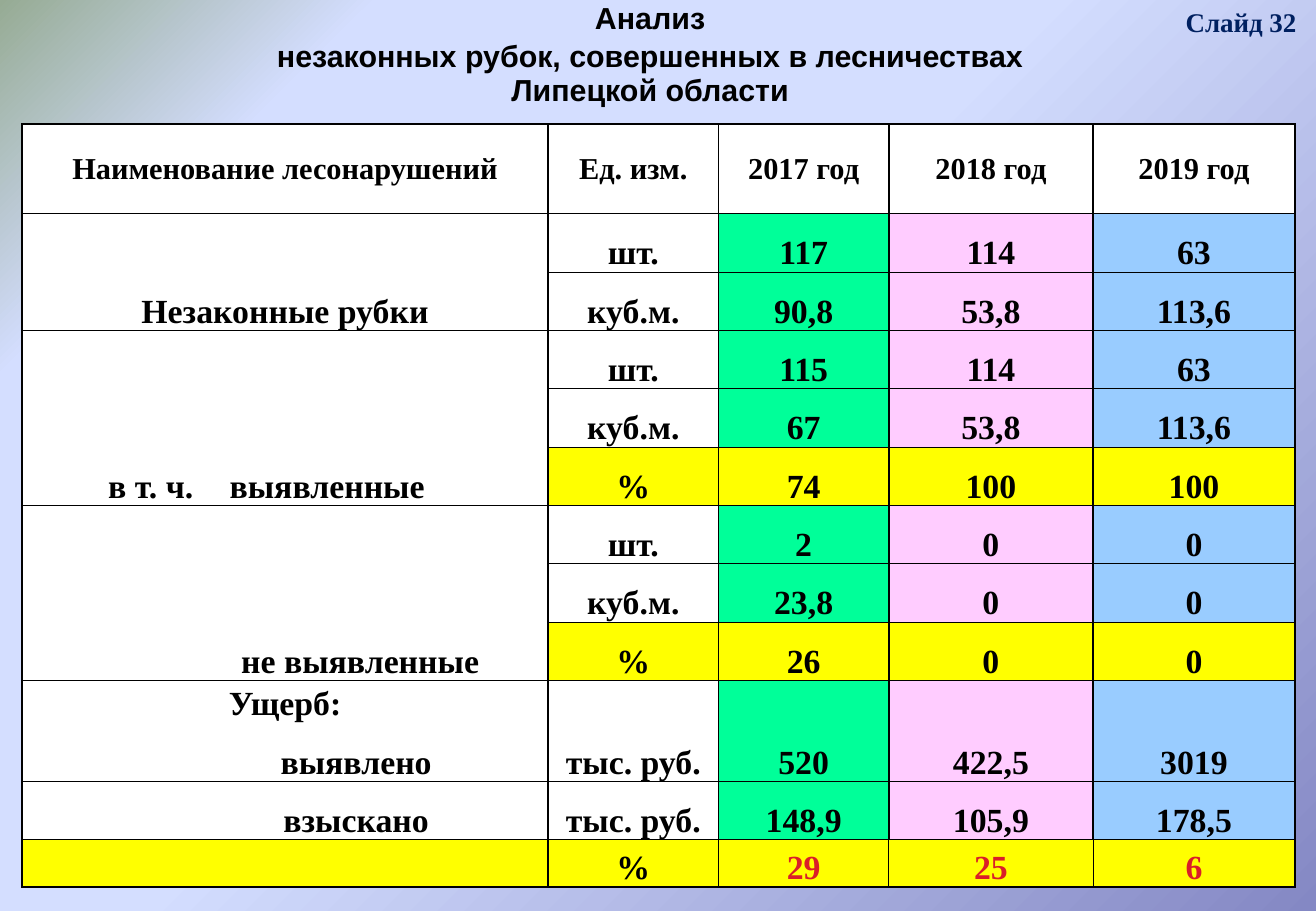
from pptx import Presentation
from pptx.dml.color import RGBColor
from pptx.enum.text import MSO_ANCHOR as Anchor, PP_ALIGN as Align
from pptx.oxml import parse_xml
from pptx.oxml.ns import nsdecls
from pptx.util import Cm, Pt

TITLE = ["Анализ", "незаконных рубок, совершенных в лесничествах Липецкой области"]
SLIDE_LABEL = "Слайд 32"
HEADER = ["Наименование лесонарушений", "Ед. изм.", "2017 год", "2018 год", "2019 год"]
# Group name, left indent in cm, rows of unit and yearly values
GROUPS = [
    ("Незаконные рубки", 0, [
        ("шт.", "117", "114", "63"),
        ("куб.м.", "90,8", "53,8", "113,6")]),
    ("в т. ч.\tвыявленные", 1.77, [
        ("шт.", "115", "114", "63"),
        ("куб.м.", "67", "53,8", "113,6"),
        ("%", "74", "100", "100")]),
    ("не выявленные", 3.14, [
        ("шт.", "2", "0", "0"),
        ("куб.м.", "23,8", "0", "0"),
        ("%", "26", "0", "0")]),
    ("Ущерб:", 0, [("", "", "", "")]),
    ("выявлено", 2.97, [("тыс. руб.", "520", "422,5", "3019")]),
    ("взыскано", 2.97, [("тыс. руб.", "148,9", "105,9", "178,5")]),
    ("", 0, [("%", "29", "25", "6")]),
]
DAMAGE_ROW, FOUND_ROW, COLLECTED_ROW, SHARE_ROW = 9, 10, 11, 12

THEME = {
    "serif": "Times New Roman", "sans": "Arial",
    "title_size": 18, "header_size": 18, "body_size": 20, "label_size": 16,
    "text": "000000", "label": "002060", "result": "DA1F28", "line": "000000",
    "columns": ["FFFFFF", "FFFFFF", "00FF99", "FFCCFF", "99CCFF"],
    "percent": "FFFF00",
    "background": [(0, "8488C4"), (53, "D4DEFF"), (83, "D4DEFF"), (100, "96AB94")],
    "thin": 0.5, "thick": 1,
}
COLUMN_WIDTHS = [11, 3.56, 3.56, 4.27, 4.22]
ROW_HEIGHTS = [1.88] + [1.22] * 8 + [0.89] + [1.22] * 2 + [0.99]
CELL_INSET = 0.03
TAB_POSITION = 5.14


def paint_background(slide):
    slide.background.fill.solid()
    stops = "".join(f'<a:gs pos="{pos * 1000}"><a:srgbClr val="{color}"/></a:gs>'
                    for pos, color in THEME["background"])
    gradient = parse_xml(
        f'<a:gradFill {nsdecls("a")} rotWithShape="1"><a:gsLst>{stops}</a:gsLst>'
        '<a:path path="circle"><a:fillToRect l="100000" t="100000"/></a:path></a:gradFill>')
    solid = slide.element.xpath(".//p:bgPr/a:solidFill")[0]
    solid.getparent().replace(solid, gradient)


def write(frame, text, font, size, color=THEME["text"]):
    paragraph = frame.paragraphs[0]
    paragraph.alignment = Align.CENTER
    if text:
        run = paragraph.add_run()
        run.text = text
        run.font.name, run.font.size, run.font.bold = font, Pt(size), True
        run.font.color.rgb = RGBColor.from_string(color)
    return paragraph


def indent(paragraph, left):
    """Indent a centred name; a name with a tab is set from the left instead."""
    properties = paragraph._p.get_or_add_pPr()
    properties.set("marL", str(Cm(left)))
    properties.set("indent", "0")
    if "\t" in paragraph.text:
        paragraph.alignment = Align.LEFT
        properties.append(parse_xml(
            f'<a:tabLst {nsdecls("a")}><a:tab pos="{Cm(TAB_POSITION)}" algn="l"/></a:tabLst>'))


def format_cell(cell, borders, fill=None, anchor=Anchor.BOTTOM):
    """Borders are widths in points for left, right, top, bottom; 0 draws none."""
    cell.vertical_anchor = anchor
    cell.margin_left = cell.margin_right = cell.margin_top = Cm(CELL_INSET)
    cell.margin_bottom = 0
    properties = cell._tc.get_or_add_tcPr()
    for side, width in zip("LRTB", borders):
        paint = (f'<a:solidFill><a:srgbClr val="{THEME["line"]}"/></a:solidFill>'
                 if width else "<a:noFill/>")
        properties.append(parse_xml(
            f'<a:ln{side} {nsdecls("a")} w="{Pt(width)}">{paint}</a:ln{side}>'))
    if fill:
        cell.fill.solid()
        cell.fill.fore_color.rgb = RGBColor.from_string(fill)
    else:
        cell.fill.background()


def new_table(slide, left, top, widths, heights):
    table = slide.shapes.add_table(len(heights), len(widths), Cm(left), Cm(top),
                                   Cm(sum(widths)), Cm(sum(heights))).table
    table.first_row = table.horz_banding = False
    for column, width in zip(table.columns, widths):
        column.width = Cm(width)
    for row, height in zip(table.rows, heights):
        row.height = Cm(height)
    return table


def horizontal_line(edge, column, merged_edges):
    """Width of the line above row number edge."""
    if edge == FOUND_ROW or (column == 0 and edge in merged_edges):
        return 0
    thick = (edge in (0, len(ROW_HEIGHTS))
             or (edge == DAMAGE_ROW and column >= 2)
             or (edge in (COLLECTED_ROW, SHARE_ROW) and column >= 1))
    return THEME["thick" if thick else "thin"]


def vertical_line(row, edge):
    thin = row == SHARE_ROW and 2 <= edge < len(COLUMN_WIDTHS)
    return THEME["thin" if thin else "thick"]


def add_violations(slide):
    table = new_table(slide, 0.46, 2.59, COLUMN_WIDTHS, ROW_HEIGHTS)
    rows, indents, merged_edges = [HEADER], {}, set()
    for name, left, values in GROUPS:
        first, last = len(rows), len(rows) + len(values) - 1
        indents[first] = left
        merged_edges.update(range(first + 1, last + 1))
        rows += [(name if i == 0 else "", *line) for i, line in enumerate(values)]
        if last > first:
            table.cell(first, 0).merge(table.cell(last, 0))

    for r, texts in enumerate(rows):
        for c, text in enumerate(texts):
            percent = texts[1] == "%" and (c > 0 or r == SHARE_ROW)
            fill = THEME["percent"] if percent else THEME["columns"][c]
            if r == 0:
                fill = THEME["columns"][0]
            cell = table.cell(r, c)
            borders = (vertical_line(r, c), vertical_line(r, c + 1),
                       horizontal_line(r, c, merged_edges),
                       horizontal_line(r + 1, c, merged_edges))
            format_cell(cell, borders, fill, Anchor.BOTTOM if r else Anchor.MIDDLE)
            color = THEME["result" if r == SHARE_ROW and c >= 2 else "text"]
            size = THEME["body_size" if r else "header_size"]
            paragraph = write(cell.text_frame, text, THEME["serif"], size, color)
            if c == 0 and indents.get(r):
                indent(paragraph, indents[r])


def add_title(slide):
    table = new_table(slide, 4.42, 0, [18.34], [0.75, 1.5])
    for r, text in enumerate(TITLE):
        format_cell(table.cell(r, 0), (0, 0, 0, 0))
        write(table.cell(r, 0).text_frame, text, THEME["sans"], THEME["title_size"])


def add_slide_label(slide):
    label = slide.shapes.add_textbox(Cm(24.51), 0, Cm(2.87), Cm(0.94))
    label.text_frame.word_wrap = False
    write(label.text_frame, SLIDE_LABEL, THEME["serif"], THEME["label_size"], THEME["label"])


def main():
    deck = Presentation()
    deck.slide_width, deck.slide_height = Cm(27.51), Cm(19.05)
    slide = deck.slides.add_slide(deck.slide_layouts[6])
    paint_background(slide)
    add_violations(slide)
    add_title(slide)
    add_slide_label(slide)
    deck.save("out.pptx")


if __name__ == "__main__":
    main()
